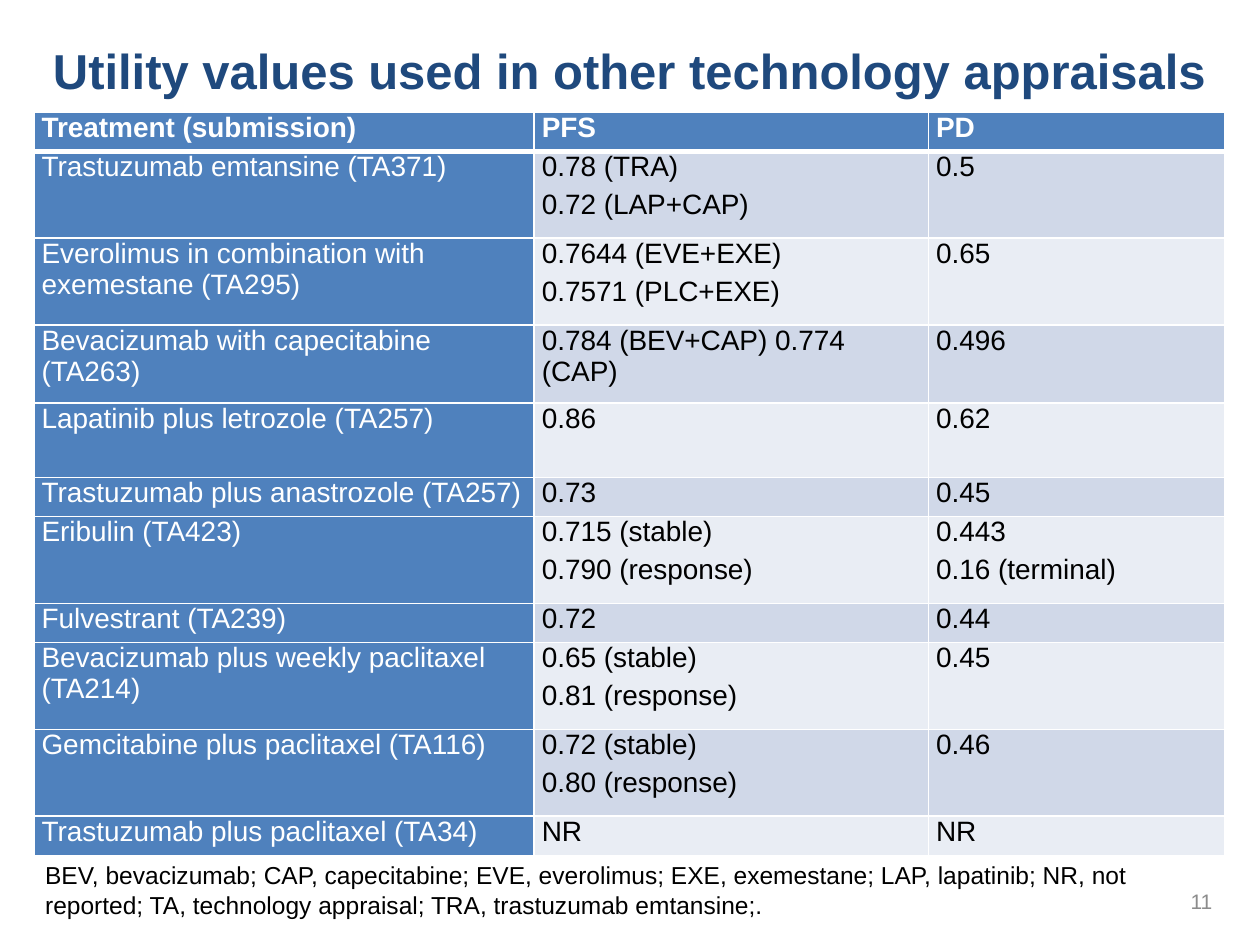
from lxml import etree
from pptx import Presentation
from pptx.dml.color import RGBColor
from pptx.enum.text import MSO_ANCHOR, PP_ALIGN
from pptx.oxml.ns import qn
from pptx.util import Inches, Pt

MIDDLE, TOP = MSO_ANCHOR.MIDDLE, MSO_ANCHOR.TOP
LEFT, CENTER, RIGHT = PP_ALIGN.LEFT, PP_ALIGN.CENTER, PP_ALIGN.RIGHT

NAVY, BLUE, WHITE, BLACK, GREY = "1F497D", "4F81BD", "FFFFFF", "000000", "8C8C8C"
BANDS = ["D0D8E8", "E9EDF4"]

COLUMN_WIDTHS = [3.97, 3.13, 2.35]
# Row height, treatment, PFS utility, PD utility
ROWS = [
    (0.31, "Treatment (submission)", "PFS", "PD"),
    (0.69, "Trastuzumab emtansine (TA371)", "0.78 (TRA)\n0.72 (LAP+CAP)", "0.5"),
    (0.69, "Everolimus in combination with exemestane (TA295)",
     "0.7644 (EVE+EXE)\n0.7571 (PLC+EXE)", "0.65"),
    (0.62, "Bevacizumab with capecitabine (TA263)", "0.784 (BEV+CAP) 0.774 (CAP)", "0.496"),
    (0.59, "Lapatinib plus letrozole (TA257)", "0.86", "0.62"),
    (0.31, "Trastuzumab plus anastrozole (TA257)", "0.73", "0.45"),
    (0.69, "Eribulin (TA423)", "0.715 (stable)\n0.790 (response)", "0.443\n0.16 (terminal)"),
    (0.31, "Fulvestrant (TA239)", "0.72", "0.44"),
    (0.69, "Bevacizumab plus weekly paclitaxel (TA214)", "0.65 (stable)\n0.81 (response)", "0.45"),
    (0.69, "Gemcitabine plus paclitaxel (TA116)", "0.72 (stable)\n0.80 (response)", "0.46"),
    (0.31, "Trastuzumab plus paclitaxel (TA34)", "NR", "NR"),
]


def rgb(color):
    return RGBColor.from_string(color)


def write(frame, text, size, color, bold=False, align=LEFT):
    """Fill a text frame, one paragraph a line, and return its paragraphs."""
    frame.word_wrap = True
    frame.text = text
    for paragraph in frame.paragraphs:
        paragraph.alignment = align
        for run in paragraph.runs:
            run.font.name = "Arial"
            run.font.size = Pt(size)
            run.font.bold = bold
            run.font.color.rgb = rgb(color)
    return frame.paragraphs


prs = Presentation()
prs.slide_width, prs.slide_height = Inches(10), Inches(7.5)
slide = prs.slides.add_slide(prs.slide_layouts[6])

# Title, page number and abbreviations
captions = [
    ((0.27, 0.21, 9.45, 0.75), "Utility values used in other technology appraisals",
     28, NAVY, True, CENTER, MIDDLE),
    ((7.47, 6.95, 2.25, 0.4), "11", 12, GREY, False, RIGHT, MIDDLE),
    ((0.26, 6.78, 9.45, 0.57),
     "BEV, bevacizumab; CAP, capecitabine; EVE, everolimus; EXE, exemestane; LAP, lapatinib; "
     "NR, not reported; TA, technology appraisal; TRA, trastuzumab emtansine;.",
     14, BLACK, False, LEFT, TOP),
]
for place, text, size, color, bold, align, anchor in captions:
    frame = slide.shapes.add_textbox(*map(Inches, place)).text_frame
    frame.vertical_anchor = anchor
    for paragraph in write(frame, text, size, color, bold, align):
        if size == 28:
            paragraph.line_spacing = 0.9

# Utility table
utilities = slide.shapes.add_table(
    len(ROWS), len(COLUMN_WIDTHS), Inches(0.27), Inches(0.89),
    Inches(sum(COLUMN_WIDTHS)), Inches(sum(row[0] for row in ROWS))).table
for column, width in zip(utilities.columns, COLUMN_WIDTHS):
    column.width = Inches(width)

for r, (height, *texts) in enumerate(ROWS):
    utilities.rows[r].height = Inches(height)
    for c, text in enumerate(texts):
        cell = utilities.cell(r, c)
        is_header = r == 0
        on_blue = is_header or c == 0
        cell.margin_left = cell.margin_right = Inches(0.06)
        cell.margin_top = cell.margin_bottom = 0
        for paragraph in write(cell.text_frame, text, 16, WHITE if on_blue else BLACK, is_header):
            paragraph.space_before = Pt(4 if is_header else 2)
            paragraph.space_after = Pt(2)

        # The rule below the header is heavier than the rest
        properties = cell._tc.get_or_add_tcPr()
        for side in ("lnL", "lnR", "lnT", "lnB"):
            heavy = (r, side) in [(0, "lnB"), (1, "lnT")]
            line = etree.SubElement(properties, qn("a:" + side), w=str(Pt(3 if heavy else 1)))
            line_fill = etree.SubElement(line, qn("a:solidFill"))
            etree.SubElement(line_fill, qn("a:srgbClr"), val=WHITE)
        cell.fill.solid()
        cell.fill.fore_color.rgb = rgb(BLUE if on_blue else BANDS[(r - 1) % 2])

prs.save("out.pptx")
